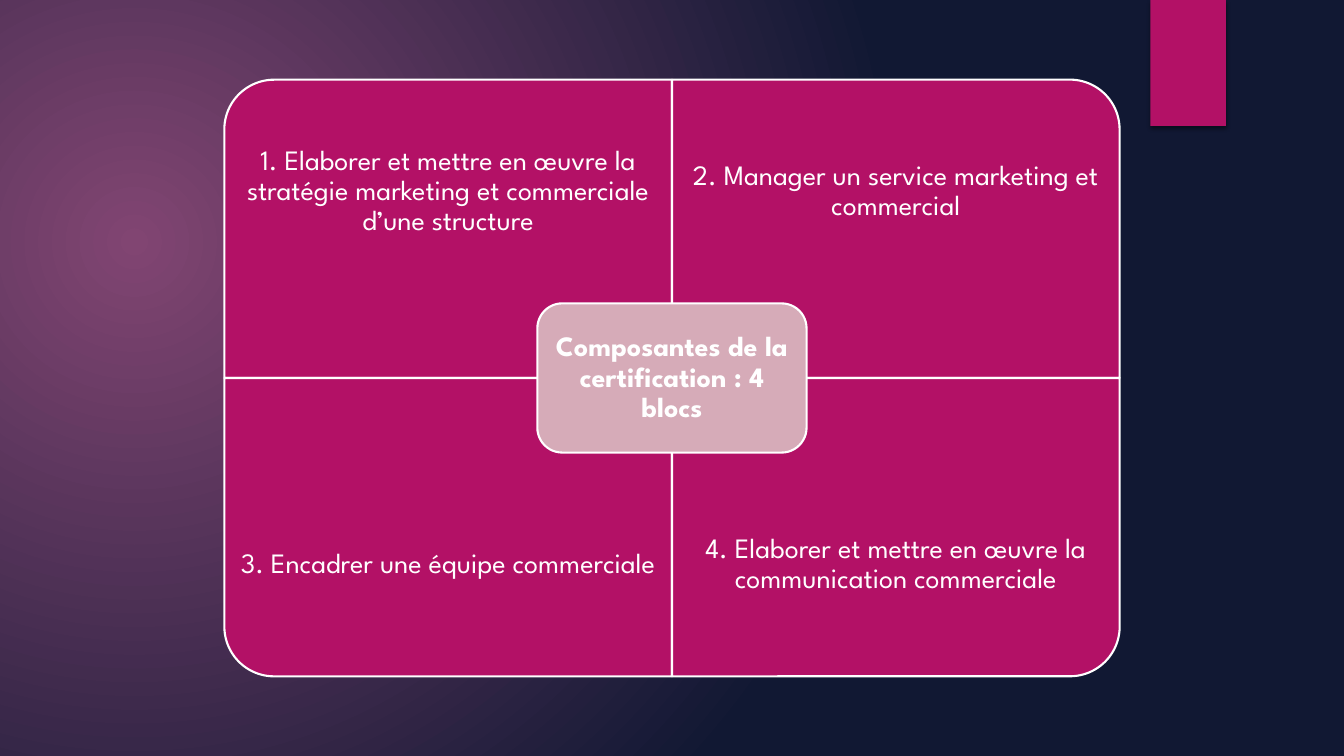
from lxml.etree import SubElement
from pptx import Presentation
from pptx.dml.color import RGBColor
from pptx.enum.shapes import MSO_SHAPE
from pptx.enum.text import MSO_ANCHOR, PP_ALIGN
from pptx.oxml.ns import qn
from pptx.util import Inches, Pt

COLORS = {
    "glow": "814572",
    "night": "111833",
    "magenta": "B31166",
    "rose": "D6ABB8",
    "white": "FFFFFF",
    "black": "000000",
}
FONT = "League Spartan"
CENTER_X, CENTER_Y = 6.665, 3.75
PANEL_WIDTH, PANEL_HEIGHT = 4.44, 2.96
TEXT_HEIGHT = 2.22
BLOCKS = [
    ("1. Elaborer et mettre en œuvre la stratégie marketing et commerciale d’une structure", 270),
    ("2. Manager un service marketing et commercial", 0),
    ("3. Encadrer une équipe commerciale", 180),
    ("4. Elaborer et mettre en œuvre la communication commerciale", 90),
]


def color(name):
    return RGBColor.from_string(COLORS[name])


def paint_background(page):
    fill = page.background.fill
    fill.gradient()
    for stop, name, position in zip(fill.gradient_stops, ("glow", "night"), (0, 1)):
        stop.color.rgb = color(name)
        stop.position = position
    gradient = page.element.find(".//" + qn("a:gradFill"))
    gradient.remove(gradient.find(qn("a:lin")))
    circle = SubElement(gradient, qn("a:path"), path="circle")
    SubElement(circle, qn("a:fillToRect"), l="45000", t="65000", r="125000", b="100000")


def add_shape(page, kind, left, top, width, height, fill, outlined=True):
    shape = page.shapes.add_shape(kind, Inches(left), Inches(top), Inches(width), Inches(height))
    shape.shadow.inherit = False
    shape.fill.solid()
    shape.fill.fore_color.rgb = color(fill)
    if outlined:
        shape.line.color.rgb = color("white")
        shape.line.width = Pt(1.5)
    else:
        shape.line.fill.background()
    return shape


def add_ribbon(page):
    ribbon = add_shape(page, MSO_SHAPE.RECTANGLE, 11.41, 0, 0.75, 1.25, "magenta", outlined=False)
    effects = ribbon.element.spPr.find(qn("a:effectLst"))
    shadow = SubElement(effects, qn("a:outerShdw"), blurRad=str(Pt(3)), dist=str(Pt(2)),
                        dir="5400000", rotWithShape="0")
    tint = SubElement(shadow, qn("a:srgbClr"), val=COLORS["black"])
    SubElement(tint, qn("a:alpha"), val="45000")


def add_label(page, text, left, top, width, height, margin, bold=False):
    box = page.shapes.add_textbox(Inches(left), Inches(top), Inches(width), Inches(height))
    frame = box.text_frame
    frame.word_wrap = True
    frame.vertical_anchor = MSO_ANCHOR.MIDDLE
    frame.margin_left = frame.margin_right = Inches(margin)
    frame.margin_top = frame.margin_bottom = Inches(margin)
    frame.text = text
    para = frame.paragraphs[0]
    para.alignment = PP_ALIGN.CENTER
    para.line_spacing = 0.9
    para.space_after = Pt(7)
    span = para.runs[0]
    span.font.name = FONT
    span.font.size = Pt(20)
    span.font.bold = bold
    span.font.color.rgb = color("white")


def add_block(page, index, text, rotation):
    row, column = divmod(index, 2)
    left = CENTER_X + (column - 1) * PANEL_WIDTH
    top = CENTER_Y + (row - 1) * PANEL_HEIGHT
    width, height = PANEL_WIDTH, PANEL_HEIGHT
    if rotation % 180:
        width, height = height, width
    panel = add_shape(page, MSO_SHAPE.ROUND_1_RECTANGLE,
                      left + (PANEL_WIDTH - width) / 2, top + (PANEL_HEIGHT - height) / 2,
                      width, height, "magenta")
    panel.rotation = rotation
    text_top = top + row * (PANEL_HEIGHT - TEXT_HEIGHT)
    add_label(page, text, left, text_top, PANEL_WIDTH, TEXT_HEIGHT, 0.16)


def add_title(page, text):
    width, height, inset = 2.67, 1.48, 0.07
    left, top = CENTER_X - width / 2, CENTER_Y - height / 2
    add_shape(page, MSO_SHAPE.ROUNDED_RECTANGLE, left, top, width, height, "rose")
    add_label(page, text, left + inset, top + inset,
              width - 2 * inset, height - 2 * inset, 0.08, bold=True)


def main():
    deck = Presentation()
    deck.slide_width, deck.slide_height = Inches(13.33), Inches(7.5)
    page = deck.slides.add_slide(deck.slide_layouts[6])
    paint_background(page)
    add_ribbon(page)
    for index, (text, rotation) in enumerate(BLOCKS):
        add_block(page, index, text, rotation)
    add_title(page, "Composantes de la certification : 4 blocs")
    deck.save("out.pptx")


if __name__ == "__main__":
    main()
